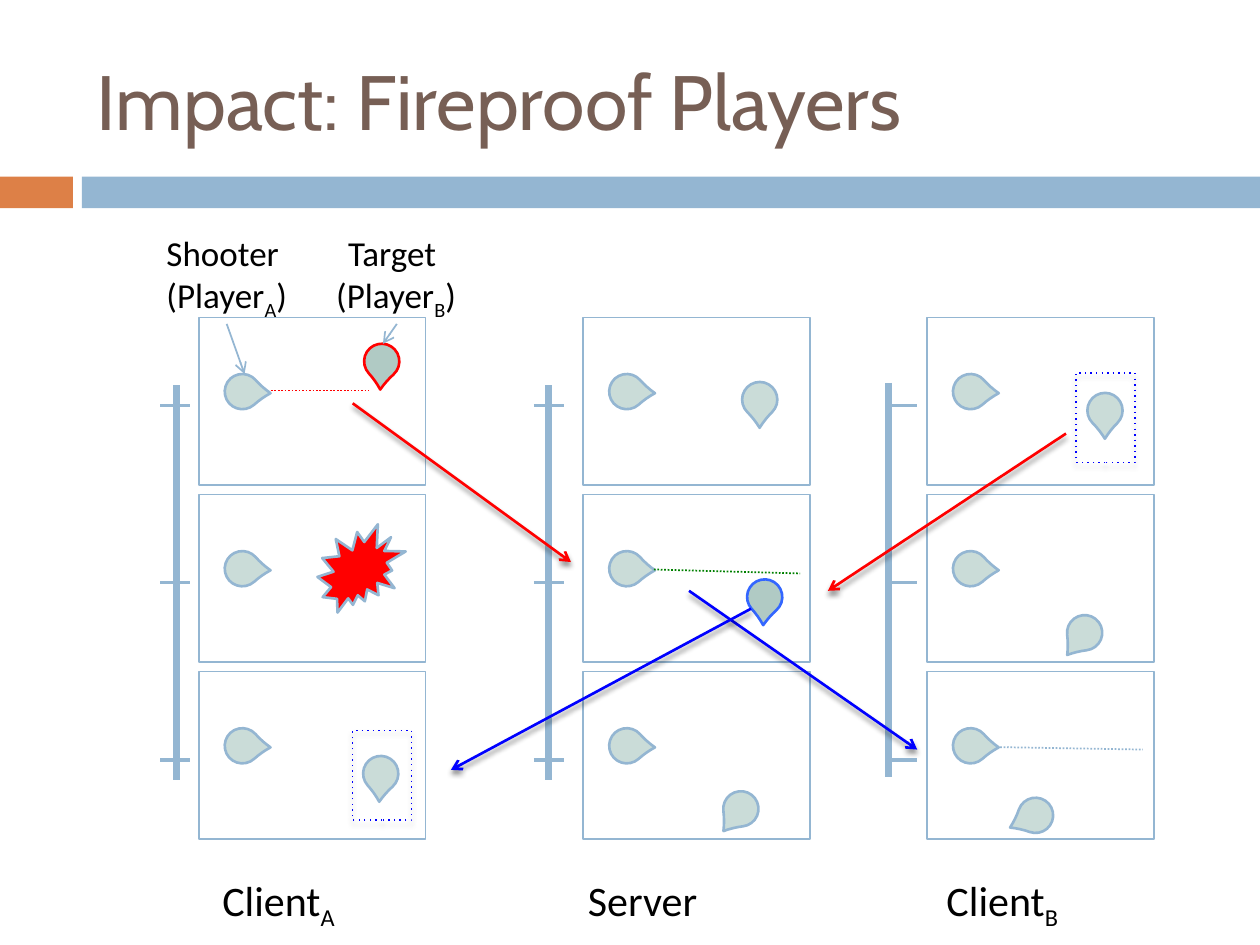
from lxml import etree
from pptx import Presentation
from pptx import util as u
from pptx.dml.color import RGBColor
from pptx.enum import dml, shapes, text
from pptx.oxml.ns import qn

BLUE = RGBColor(0x94, 0xB6, 0xD2)
ORANGE = RGBColor(0xDD, 0x80, 0x47)
BROWN = RGBColor(0x77, 0x5F, 0x55)
PALE = RGBColor(0xCA, 0xDC, 0xD8)
TEAL = RGBColor(0xB0, 0xCA, 0xC4)
RED = RGBColor(0xFF, 0, 0)
GREEN = RGBColor(0, 0x80, 0)
DEEP_BLUE = RGBColor(0, 0, 0xFF)
HIT_BLUE = RGBColor(0x33, 0x66, 0xFF)
BLACK = RGBColor(0, 0, 0)

PRESET = shapes.MSO_SHAPE
DOTTED = dml.MSO_LINE.ROUND_DOT  # sysDot
SQUARE = dml.MSO_LINE.SQUARE_DOT

deck = Presentation()
deck.slide_width, deck.slide_height = u.Cm(25.4), u.Cm(19.05)
slide = deck.slides.add_slide(deck.slide_layouts[6])


def draw_shape(preset, x, y, w, h, fill=None, line=None, width=1.0):
    shape = slide.shapes.add_shape(preset, u.Cm(x), u.Cm(y), u.Cm(w), u.Cm(h))
    shape.shadow.inherit = False
    if fill is None:
        shape.fill.background()
    else:
        shape.fill.solid()
        shape.fill.fore_color.rgb = fill
    if line is None:
        shape.line.fill.background()
    else:
        shape.line.color.rgb = line
        shape.line.width = u.Pt(width)
    return shape


def draw_line(x1, y1, x2, y2, color=BLUE, width=1.0, dash=None, arrow=False):
    line = slide.shapes.add_connector(
        shapes.MSO_CONNECTOR.STRAIGHT, u.Cm(x1), u.Cm(y1), u.Cm(x2), u.Cm(y2))
    line.line.color.rgb = color
    line.line.width = u.Pt(width)
    if dash:
        line.line.dash_style = dash
    properties = line._element.spPr
    if arrow:
        etree.SubElement(properties.find(qn("a:ln")), qn("a:tailEnd"), type="arrow")
    etree.SubElement(properties, qn("a:effectLst"))
    return line


# Title band
draw_shape(PRESET.RECTANGLE, 0, 3.56, 1.47, 0.64, ORANGE)
draw_shape(PRESET.RECTANGLE, 1.65, 3.56, 23.75, 0.64, BLUE)

# Grid of game views: one column per machine, one row per moment
ROW_PITCH = 3.57
machines = [  # frame left, timeline x, timeline top, tick left
    (4.01, 3.56, 7.77, 3.23),
    (11.76, 11.05, 7.77, 10.76),
    (18.69, 17.91, 7.72, 17.89),
]
for frame_x, timeline_x, timeline_top, tick_x in machines:
    draw_line(timeline_x, timeline_top, timeline_x, timeline_top + 7.95, width=4)
    for row in range(3):
        offset = row * ROW_PITCH
        tick_y = 8.18 + offset
        draw_line(tick_x, tick_y, tick_x + 0.6, tick_y, width=1.75)
        draw_shape(PRESET.RECTANGLE, frame_x, 6.4 + offset, 4.57, 3.38, line=BLUE)
        shooter = draw_shape(PRESET.TEAR, frame_x + 0.52, 7.54 + offset,
                             0.71, 0.71, PALE, BLUE, 1.5)
        shooter.adjustments[0] = 1.133
        shooter.rotation = 48.2

# Target player in each view
for x, y, angle, fill, outline in [
    (7.34, 6.93, 138, TEAL, RED),
    (7.32, 15.24, 138, PALE, BLUE),
    (14.96, 7.7, 135.2, PALE, BLUE),
    (15.06, 11.68, 138, TEAL, HIT_BLUE),
    (14.58, 15.95, 173.1, PALE, BLUE),
    (21.92, 7.92, 135.2, PALE, BLUE),
    (21.51, 12.4, 173.1, PALE, BLUE),
    (20.52, 16.08, 199.4, PALE, BLUE),
]:
    target = draw_shape(PRESET.TEAR, x, y, 0.71, 0.71, fill, outline, 1.5)
    target.adjustments[0] = 1.133
    target.rotation = angle

# Explosion seen by client A
draw_shape(PRESET.EXPLOSION2, 6.4, 10.57, 1.78, 1.78, RED, BLUE, 1.5)

# Shots
draw_line(5.46, 7.87, 7.44, 7.87, RED, dash=DOTTED)
draw_line(13.18, 11.48, 16.13, 11.56, GREEN, dash=DOTTED)
draw_line(20.09, 15.06, 23.04, 15.11, BLUE, dash=DOTTED)

# Pointers from the player labels
draw_line(4.57, 6.53, 4.93, 7.54, arrow=True)
draw_line(8, 6.53, 7.72, 6.93, arrow=True)

# Messages between machines, and the boxes around the moved target
shadowed = []
for x1, y1, x2, y2, color in [
    (7.11, 8.13, 11.51, 11.33, RED),
    (21.49, 8.74, 16.69, 11.91, RED),
    (13.89, 11.91, 18.49, 15.11, DEEP_BLUE),
    (15.14, 12.27, 9.09, 15.52, DEEP_BLUE),
]:
    shadowed.append(draw_line(x1, y1, x2, y2, color, 1.5, arrow=True))
for x, y in [(21.69, 7.52), (7.11, 14.73)]:
    box = draw_shape(PRESET.RECTANGLE, x, y, 1.19, 1.8, line=DEEP_BLUE, width=0.79)
    box.line.dash_style = dml.MSO_LINE.ROUND_DOT
    box.line._ln.find(qn("a:prstDash")).set("val", "dot")
    shadowed.append(box)
for item in shadowed:
    effects = item._element.spPr.find(qn("a:effectLst"))
    shadow = etree.SubElement(effects, qn("a:outerShdw"), blurRad="38100",
                              dist="30480", dir="5400000", rotWithShape="0")
    tint = etree.SubElement(shadow, qn("a:srgbClr"), val="000000")
    etree.SubElement(tint, qn("a:alpha"), val="45000")

# Title and labels; each run is (text, is subscript)
CENTER, LEFT = text.PP_ALIGN.CENTER, text.PP_ALIGN.LEFT
for x, y, w, h, size, font, color, align, wrap, lines in [
    (1.7, 0.64, 22.66, 2.74, 44, "Cabin", BROWN, LEFT, True,
     [[("Impact: Fireproof Players", False)]]),
    (3.07, 4.55, 3, 1.96, 20, "Calibri", BLACK, CENTER, False,
     [[("Shooter ", False)], [("(Player", False), ("A", True), (")", False)]]),
    (6.5, 4.55, 2.97, 1.96, 20, "Calibri", BLACK, CENTER, False,
     [[("Target ", False)], [("(Player", False), ("B", True), (")", False)]]),
    (3.43, 17.5, 4.37, 1.3, 24, "Calibri", BLACK, CENTER, True,
     [[("Client", False), ("A", True)]]),
    (10.77, 17.5, 4.37, 1.3, 24, "Calibri", BLACK, CENTER, True,
     [[("Server", False)]]),
    (17.32, 17.5, 5.77, 1.3, 24, "Calibri", BLACK, CENTER, True,
     [[("Client", False), ("B", True)]]),
]:
    frame = slide.shapes.add_textbox(u.Cm(x), u.Cm(y), u.Cm(w), u.Cm(h)).text_frame
    frame.word_wrap = wrap
    if align == LEFT:
        frame.vertical_anchor = text.MSO_ANCHOR.MIDDLE
    for index, line_runs in enumerate(lines):
        paragraph = frame.add_paragraph() if index else frame.paragraphs[0]
        paragraph.alignment = align
        for words, subscript in line_runs:
            run = paragraph.add_run()
            run.text = words
            run.font.size = u.Pt(size)
            run.font.name = font
            run.font.color.rgb = color
            if subscript:
                run._r.get_or_add_rPr().set("baseline", "-25000")

deck.save("out.pptx")
